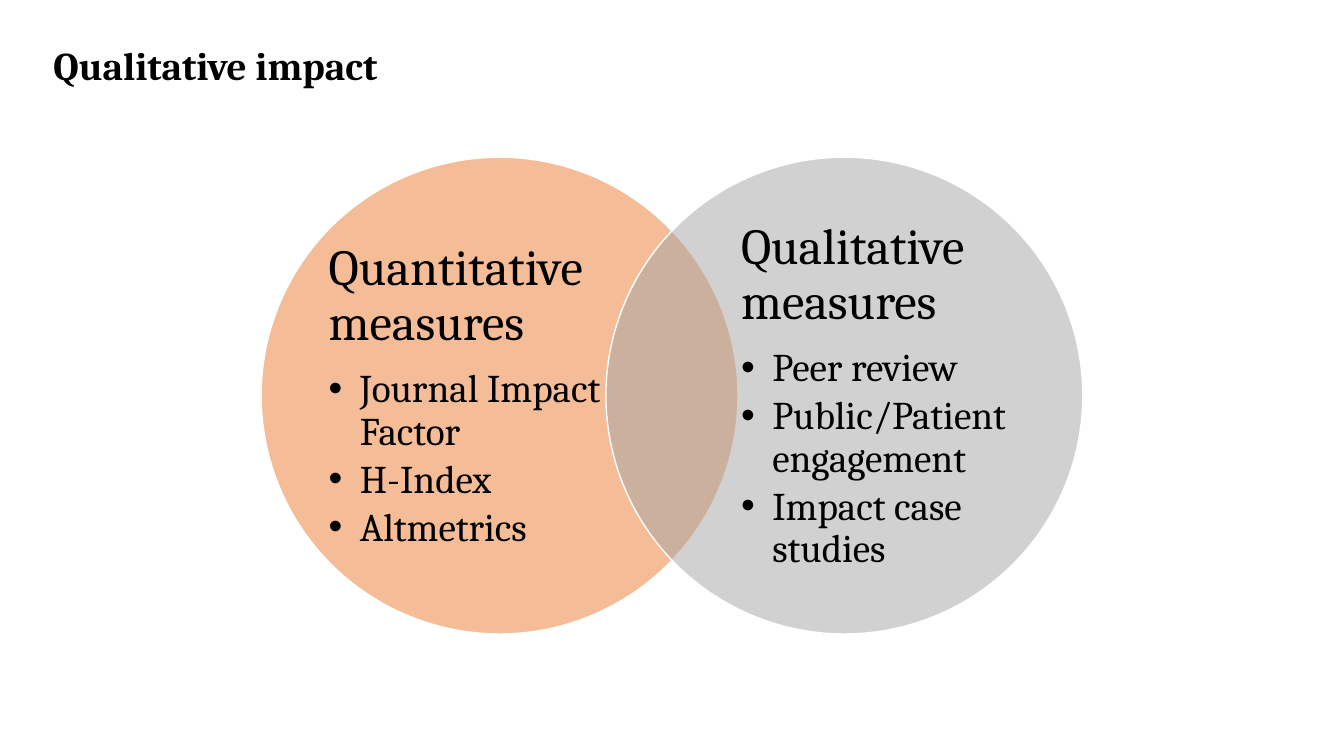
import pptx
import pptx.util
import pptx.dml.color
import pptx.enum.shapes
import pptx.enum.text
import pptx.oxml.ns
from lxml import etree

Inches, Pt = pptx.util.Inches, pptx.util.Pt
qn = pptx.oxml.ns.qn
COLORS = {"quantitative": "ED7D31", "qualitative": "A5A5A5", "outline": "FFFFFF", "text": "000000"}
FONT = "Cambria"
DIAMETER = 4.73
TEXT_TOP, TEXT_WIDTH, TEXT_HEIGHT = 0.56, 2.73, 3.62
HANG = 0.31
FRAME = {
    "word_wrap": True,
    "auto_size": pptx.enum.text.MSO_AUTO_SIZE.NONE,
    "vertical_anchor": pptx.enum.text.MSO_ANCHOR.MIDDLE,
    "margin_left": 0, "margin_top": 0, "margin_right": 0, "margin_bottom": 0,
}
TITLE_FRAME = {
    "word_wrap": True,
    "auto_size": pptx.enum.text.MSO_AUTO_SIZE.NONE,
    "vertical_anchor": pptx.enum.text.MSO_ANCHOR.TOP,
}
PARA = {"alignment": pptx.enum.text.PP_ALIGN.LEFT, "space_before": Pt(0)}
HEADING = {**PARA, "line_spacing": 0.9, "space_after": Pt(12.6), "level": 0}
ITEM = {**PARA, "line_spacing": 0.9, "space_after": Pt(4.2), "level": 1}


def color(name):
    """Return the named colour."""
    return pptx.dml.color.RGBColor.from_string(COLORS[name])


def apply(target, values):
    """Set each format value on the target."""
    for name, value in values.items():
        setattr(target, name, value)


def place(shape, box):
    """Move a shape to a box given in inches."""
    apply(shape, dict(zip(("left", "top", "width", "height"), map(Inches, box))))


def bring_to_front(shape):
    """Put a shape above all the others."""
    shape.element.getparent().append(shape.element)


def write(para, text, size, bold=False):
    """Add one run of text to a paragraph."""
    span = para.add_run()
    span.text = text
    apply(span.font, {"name": FONT, "size": Pt(size), "bold": bold})
    span.font.color.rgb = color("text")


def set_bullet(para, bulleted):
    """Give a paragraph a hanging bullet, or none."""
    properties = para._p.get_or_add_pPr()
    hang = Inches(HANG) if bulleted else 0
    properties.set("marL", str(hang))
    properties.set("indent", str(-hang))
    if bulleted:
        etree.SubElement(properties, qn("a:buFont")).set("typeface", "Arial")
        etree.SubElement(properties, qn("a:buChar")).set("char", "•")
    else:
        etree.SubElement(properties, qn("a:buNone"))


def add_title(page, box, text):
    """Fill the title placeholder."""
    title = page.shapes.title
    place(title, box)
    apply(title.text_frame, TITLE_FRAME)
    para = title.text_frame.paragraphs[0]
    apply(para, PARA)
    write(para, text, 28, True)
    bring_to_front(title)


def add_circle(page, box, fill):
    """Draw a half transparent circle with a thin outline."""
    circle = page.shapes.add_shape(pptx.enum.shapes.MSO_SHAPE.OVAL, *map(Inches, box))
    circle.shadow.inherit = False
    circle.fill.solid()
    circle.fill.fore_color.rgb = color(fill)
    tone = circle.element.spPr.find(qn("a:solidFill")).find(qn("a:srgbClr"))
    etree.SubElement(tone, qn("a:alpha")).set("val", "50000")
    circle.line.color.rgb = color("outline")
    circle.line.width = Pt(1)


def add_measures(page, body, left, top, inset, fill, heading, items):
    """Draw one circle of the Venn diagram with its heading and list."""
    add_circle(page, (left, top, DIAMETER, DIAMETER), fill)
    place(body, (left + inset, top + TEXT_TOP, TEXT_WIDTH, TEXT_HEIGHT))
    frame = body.text_frame
    apply(frame, FRAME)
    para = frame.paragraphs[0]
    apply(para, HEADING)
    set_bullet(para, False)
    write(para, heading, 36)
    for item in items:
        para = frame.add_paragraph()
        apply(para, ITEM)
        set_bullet(para, True)
        write(para, item, 28)
    bring_to_front(body)


def main():
    """Build the slide and save it."""
    deck = pptx.Presentation()
    apply(deck, {"slide_width": Inches(13.33), "slide_height": Inches(7.5)})
    page = deck.slides.add_slide(deck.slide_layouts.get_by_name("Two Content"))
    left_body, right_body = page.placeholders[1], page.placeholders[2]
    add_measures(page, left_body, 2.59, 1.56, 0.67, "quantitative", "Quantitative measures",
                 ["Journal Impact Factor", "H-Index", "Altmetrics"])
    add_measures(page, right_body, 6.01, 1.56, 1.34, "qualitative", "Qualitative measures",
                 ["Peer review", "Public/Patient engagement", "Impact case studies"])
    add_title(page, (0.43, 0.36, 10.8, 0.57), "Qualitative impact")
    deck.save("out.pptx")


if __name__ == "__main__":
    main()
